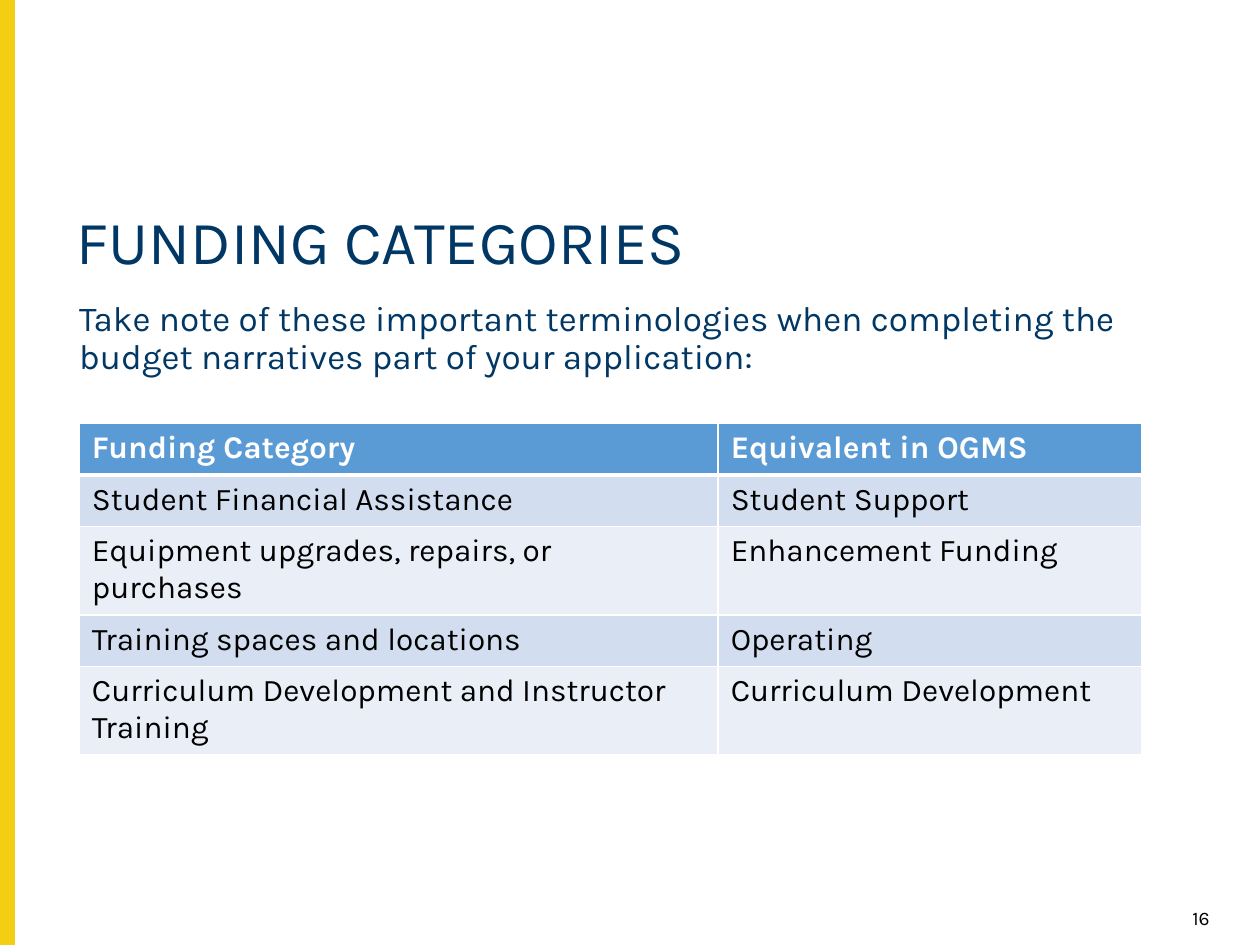
from dataclasses import dataclass

from lxml import etree
from pptx import Presentation
from pptx.dml.color import RGBColor
from pptx.enum.shapes import MSO_SHAPE
from pptx.enum.text import MSO_ANCHOR, PP_ALIGN
from pptx.oxml.ns import qn
from pptx.util import Inches, Pt

RECTANGLE = MSO_SHAPE.RECTANGLE
TOP = MSO_ANCHOR.TOP
LEFT, RIGHT = PP_ALIGN.LEFT, PP_ALIGN.RIGHT


@dataclass(frozen=True)
class Theme:
    font: str = "Karla"
    navy: str = "003764"
    yellow: str = "F4CE12"
    white: str = "FFFFFF"
    black: str = "000000"
    header: str = "5B9BD5"
    bands: tuple = ("D2DEEF", "EAEFF7")
    title_size: int = 35
    intro_size: int = 20
    table_size: int = 18
    number_size: int = 11
    border: int = 1
    header_border: int = 3


class SlideBuilder:
    def __init__(self, slide, theme):
        self.slide = slide
        self.theme = theme

    def style(self, paragraph, size, color, bold=False):
        for run in paragraph.runs:
            run.font.name = self.theme.font
            run.font.size = Pt(size)
            run.font.bold = bold
            run.font.color.rgb = RGBColor.from_string(color)

    def bar(self, left, top, width, height, color):
        bar = self.slide.shapes.add_shape(
            RECTANGLE, Inches(left), Inches(top), Inches(width), Inches(height))
        bar.shadow.inherit = False
        bar.fill.solid()
        bar.fill.fore_color.rgb = RGBColor.from_string(color)
        bar.line.color.rgb = RGBColor.from_string(color)
        bar.line.width = Pt(1)

    def text(self, content, left, top, width, height, size, color,
             align=LEFT, line_spacing=1.0, inset_top=0.05):
        box = self.slide.shapes.add_textbox(
            Inches(left), Inches(top), Inches(width), Inches(height))
        frame = box.text_frame
        frame.word_wrap = True
        frame.vertical_anchor = TOP
        frame.margin_top = Inches(inset_top)
        frame.text = content
        paragraph = frame.paragraphs[0]
        paragraph.alignment = align
        paragraph.line_spacing = line_spacing
        self.style(paragraph, size, color)

    def cell_borders(self, cell, bottom_width):
        properties = cell._tc.get_or_add_tcPr()
        widths = {"a:lnL": self.theme.border, "a:lnR": self.theme.border,
                  "a:lnT": self.theme.border, "a:lnB": bottom_width}
        # Borders come before the fill in the cell properties
        for position, (tag, width) in enumerate(widths.items()):
            line = etree.Element(qn(tag), w=str(Pt(width)))
            fill = etree.SubElement(line, qn("a:solidFill"))
            etree.SubElement(fill, qn("a:srgbClr"), val=self.theme.white)
            properties.insert(position, line)

    def table(self, rows, left, top, column_widths, row_height):
        theme = self.theme
        table = self.slide.shapes.add_table(
            len(rows), len(column_widths), Inches(left), Inches(top),
            Inches(sum(column_widths)), Inches(row_height * len(rows))).table
        for column, width in zip(table.columns, column_widths):
            column.width = Inches(width)
        for index, labels in enumerate(rows):
            is_header = index == 0
            table.rows[index].height = Inches(row_height)
            fill = theme.header if is_header else theme.bands[(index - 1) % 2]
            color = theme.white if is_header else theme.black
            for cell, label in zip(table.rows[index].cells, labels):
                cell.text_frame.text = label
                self.style(cell.text_frame.paragraphs[0], theme.table_size, color, is_header)
                cell.fill.solid()
                cell.fill.fore_color.rgb = RGBColor.from_string(fill)
                self.cell_borders(cell, theme.header_border if is_header else theme.border)


FUNDING_ROWS = [
    ("Funding Category", "Equivalent in OGMS"),
    ("Student Financial Assistance", "Student Support"),
    ("Equipment upgrades, repairs, or purchases", "Enhancement Funding"),
    ("Training spaces and locations", "Operating"),
    ("Curriculum Development and Instructor Training", "Curriculum Development"),
]


def main():
    presentation = Presentation()
    presentation.slide_width = Inches(10)
    presentation.slide_height = Inches(7.5)
    theme = Theme()
    builder = SlideBuilder(
        presentation.slides.add_slide(presentation.slide_layouts[6]), theme)

    # Accent bar along the left edge
    builder.bar(0, 0, 0.11, 7.5, theme.yellow)

    # Title and introduction
    builder.text("FUNDING CATEGORIES", 0.51, 1.6, 9.33, 0.79,
                 theme.title_size, theme.navy, line_spacing=0.9, inset_top=0.08)
    builder.text("Take note of these important terminologies when completing "
                 "the budget narratives part of your application:",
                 0.53, 2.34, 8.57, 0.64, theme.intro_size, theme.navy, line_spacing=0.9)

    # Funding categories and their equivalents
    builder.table(FUNDING_ROWS, 0.63, 3.36, (5.07, 3.36), 0.41)

    # Page number
    builder.text("16", 9.2, 7.14, 0.5, 0.21, theme.number_size, theme.black, align=RIGHT)

    presentation.save("out.pptx")


if __name__ == "__main__":
    main()
